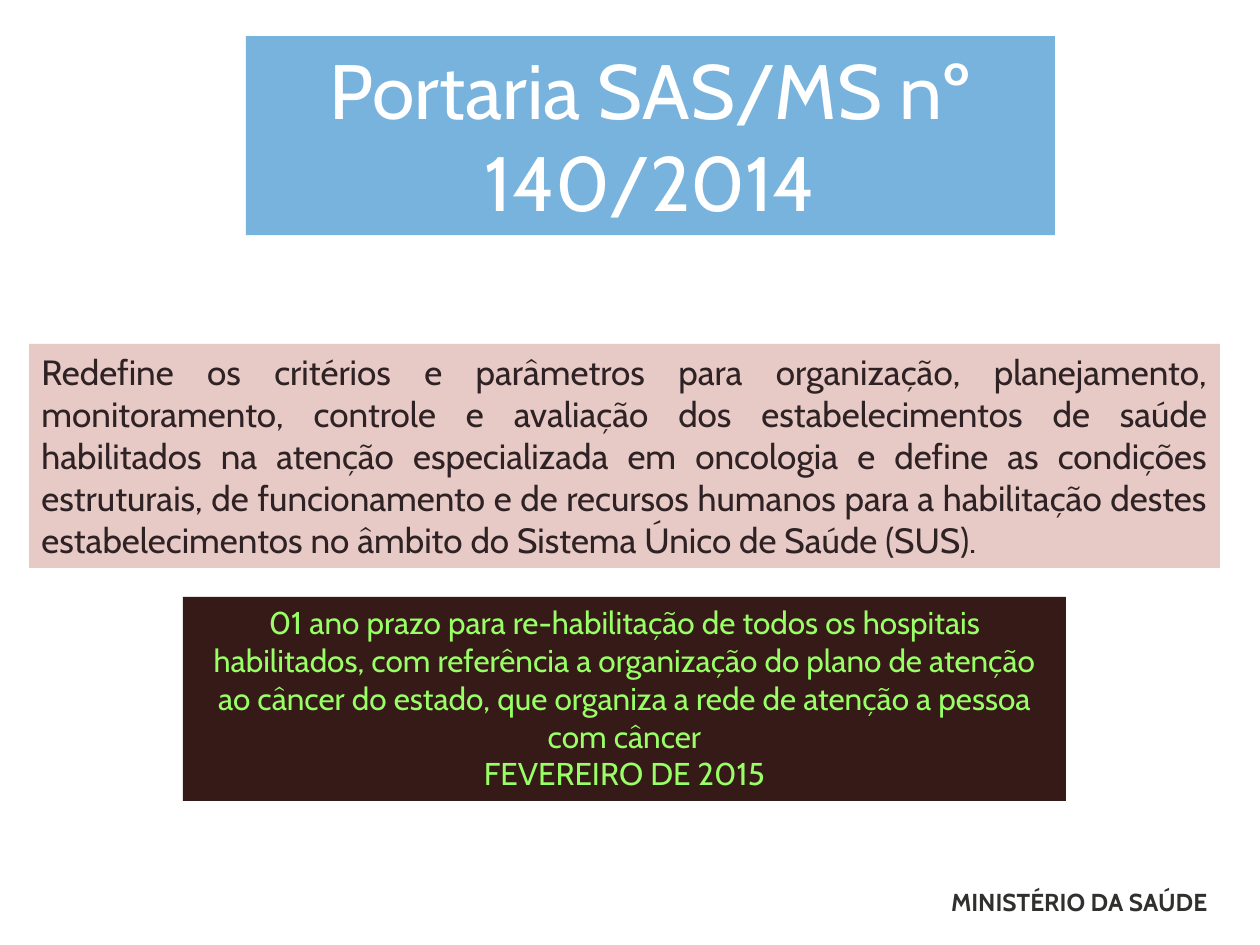
from lxml.etree import SubElement
from pptx import Presentation
from pptx.dml.color import RGBColor
from pptx.enum.shapes import MSO_SHAPE
from pptx.enum.text import MSO_ANCHOR, MSO_AUTO_SIZE, PP_ALIGN
from pptx.oxml.ns import qn
from pptx.util import Emu, Inches, Pt

PX_PER_INCH = 126
COLORS = {
    "blue": "0070C0",
    "rose": "E7C9C5",
    "maroon": "361A17",
    "ink": "2E2224",
    "lime": "99FF66",
    "gray": "30312F",
    "white": "FFFFFF",
}


def px(length):
    return Emu(round(length * Inches(1) / PX_PER_INCH))


class SlideBuilder:
    """Holds the text style and the slide being built."""

    font = "Cabin"

    def __init__(self, page):
        self.page = page

    def color(self, name):
        return RGBColor.from_string(COLORS[name])

    def fill(self, shape, name, opacity=100):
        shape.fill.solid()
        shape.fill.fore_color.rgb = self.color(name)
        if opacity < 100:
            tint = shape.element.spPr.find(qn("a:solidFill"))[0]
            SubElement(tint, qn("a:alpha"), val=str(opacity * 1000))

    def add_lines(self, shape, lines, size, color, align, bold=False):
        frame = shape.text_frame
        frame.word_wrap = True
        frame.auto_size = MSO_AUTO_SIZE.SHAPE_TO_FIT_TEXT
        frame.vertical_anchor = MSO_ANCHOR.TOP
        for index, line in enumerate(lines):
            para = frame.add_paragraph() if index else frame.paragraphs[0]
            para.alignment = align
            span = para.add_run()
            span.text = line
            span.font.name = self.font
            span.font.size = Pt(size)
            span.font.bold = bold
            span.font.color.rgb = self.color(color)

    def title(self, left, top, width, height, text):
        box = self.page.shapes.title
        box.left, box.top, box.width, box.height = map(px, (left, top, width, height))
        self.fill(box, "blue", opacity=53)
        self.add_lines(box, [text], 44, "white", PP_ALIGN.CENTER)

    def panel(self, left, top, width, height, fill, lines, size, color, align):
        box = self.page.shapes.add_shape(
            MSO_SHAPE.RECTANGLE, *map(px, (left, top, width, height)))
        box.shadow.inherit = False
        box.line.fill.background()
        self.fill(box, fill)
        self.add_lines(box, lines, size, color, align)

    def label(self, left, top, width, height, text):
        box = self.page.shapes.add_textbox(*map(px, (left, top, width, height)))
        self.add_lines(box, [text], 14, "gray", PP_ALIGN.RIGHT, bold=True)


def main():
    deck = Presentation()
    deck.slide_width, deck.slide_height = Inches(10), Inches(7.5)
    title_only = deck.slide_layouts[5]
    builder = SlideBuilder(deck.slides.add_slide(title_only))

    builder.title(246, 36, 809, 199, "Portaria SAS/MS nº 140/2014")
    builder.panel(29, 344, 1191, 224, "rose", [
        "Redefine os critérios e parâmetros para organização, planejamento, "
        "monitoramento, controle e avaliação dos estabelecimentos de saúde "
        "habilitados na atenção especializada em oncologia e define as condições "
        "estruturais, de funcionamento e de recursos humanos para a habilitação "
        "destes estabelecimentos no âmbito do Sistema Único de Saúde (SUS).",
    ], 20, "ink", PP_ALIGN.JUSTIFY)
    builder.panel(183, 597, 883, 204, "maroon", [
        "01 ano prazo para re-habilitação de todos os hospitais habilitados, "
        "com referência a organização do plano de atenção ao câncer do estado, "
        "que organiza a rede de atenção a pessoa",
        "com câncer",
        "FEVEREIRO DE 2015",
    ], 18, "lime", PP_ALIGN.CENTER)
    builder.label(837, 881, 383, 43, "MINISTÉRIO DA SAÚDE")

    deck.save("out.pptx")


if __name__ == "__main__":
    main()
